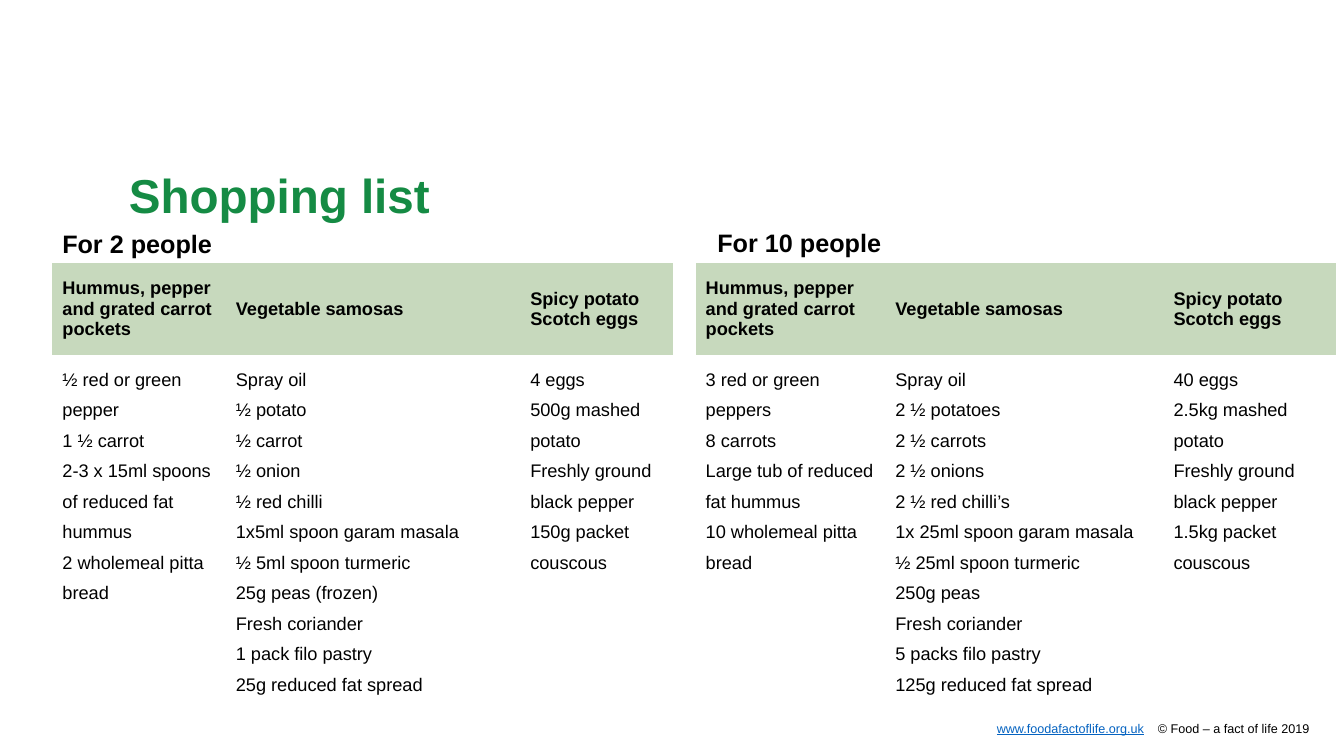
import pptx
import pptx.dml.color
import pptx.enum.text
import pptx.oxml
import pptx.oxml.ns
import pptx.util
from pptx.util import Cm

PLAIN_TABLE_STYLE = "{2D5ABB26-0587-4C30-8999-92F81FD0307C}"
HEADINGS = [
    "Hummus, pepper and grated carrot pockets",
    "Vegetable samosas",
    "Spicy potato Scotch eggs",
]
SHOPPING_LISTS = [
    {
        "people": "For 2 people",
        "label_at": (1.32, 5.64),
        "table_left": 1.32,
        "columns": [4.37, 7.42, 3.86],
        "body_fill": "FFFFFF",
        "ingredients": [
            ["½ red or green pepper", "1 ½ carrot",
             "2-3 x 15ml spoons of reduced fat hummus", "2 wholemeal pitta bread"],
            ["Spray oil", "½ potato", "½ carrot", "½ onion", "½ red chilli",
             "1x5ml spoon garam masala", "½ 5ml spoon turmeric",
             "25g peas (frozen)", "Fresh coriander", "1 pack filo pastry",
             "25g reduced fat spread"],
            ["4 eggs", "500g mashed potato", "Freshly ground black pepper",
             "150g packet couscous"],
        ],
    },
    {
        "people": "For 10 people",
        "label_at": (17.83, 5.61),
        "table_left": 17.53,
        "columns": [4.78, 7.01, 4.34],
        "body_fill": None,
        "ingredients": [
            ["3 red or green peppers", "8 carrots",
             "Large tub of reduced fat hummus", "10 wholemeal pitta bread"],
            ["Spray oil", "2 ½ potatoes", "2 ½ carrots", "2 ½ onions",
             "2 ½ red chilli’s", "1x 25ml spoon garam masala",
             "½ 25ml spoon turmeric", "250g peas", "Fresh coriander",
             "5 packs filo pastry", "125g reduced fat spread"],
            ["40 eggs", "2.5kg mashed potato", "Freshly ground black pepper",
             "1.5kg packet couscous"],
        ],
    },
]


def colour(value):
    return pptx.dml.color.RGBColor.from_string(value)


class ShoppingPage:
    """Holds the style and the slide, and adds each kind of element."""

    font_name = "Arial"
    ink = "000000"
    green = "158B44"
    link = "0563C1"
    header_fill = "C7D9BD"
    row_heights = [2.31, 9.55]

    def __init__(self, deck):
        self.page = deck.slides.add_slide(deck.slide_layouts[5])

    def style(self, font, size, bold=False, shade=ink):
        font.name = self.font_name
        font.size = pptx.util.Pt(size)
        font.bold = bold
        font.color.rgb = colour(shade)

    def clear_margins(self, frame):
        frame.margin_left = frame.margin_right = 0
        frame.margin_top = frame.margin_bottom = 0

    def title(self, text):
        holder = self.page.shapes.title
        holder.left, holder.top = Cm(3.25), Cm(4.34)
        holder.width, holder.height = Cm(27), Cm(2.01)
        frame = holder.text_frame
        frame.text = text
        frame.vertical_anchor = pptx.enum.text.MSO_ANCHOR.TOP
        self.clear_margins(frame)
        para = frame.paragraphs[0]
        para.alignment = pptx.enum.text.PP_ALIGN.LEFT
        para.line_spacing = 0.9
        self.style(para.font, 34, True, self.green)

    def text_box(self, left, top, width, height):
        box = self.page.shapes.add_textbox(Cm(left), Cm(top), Cm(width), Cm(height))
        box.text_frame.word_wrap = True
        return box.text_frame

    def label(self, text, left, top):
        para = self.text_box(left, top, 10.39, 1.02).paragraphs[0]
        para.text = text
        self.style(para.font, 18, True)

    def fill_cell(self, cell, lines, fill, heading=False):
        if fill:
            cell.fill.solid()
            cell.fill.fore_color.rgb = colour(fill)
        else:
            cell.fill.background()
        if heading:
            cell.vertical_anchor = pptx.enum.text.MSO_ANCHOR.MIDDLE
        cell.text_frame.text = "\n".join(lines)
        for para in cell.text_frame.paragraphs:
            if not heading:
                para.line_spacing = 1.5
            self.style(para.font, 13, heading)

    def table(self, left, columns, ingredients, body_fill):
        table = self.page.shapes.add_table(
            2, len(columns), Cm(left), Cm(6.63),
            Cm(sum(columns)), Cm(sum(self.row_heights))).table
        table.horz_banding = False
        style_id = table._tbl.tblPr.find(pptx.oxml.ns.qn("a:tableStyleId"))
        style_id.text = PLAIN_TABLE_STYLE
        for row, height in zip(table.rows, self.row_heights):
            row.height = Cm(height)
        for index, width in enumerate(columns):
            table.columns[index].width = Cm(width)
            self.fill_cell(table.cell(0, index), [HEADINGS[index]], self.header_fill, True)
            self.fill_cell(table.cell(1, index), ingredients[index], body_fill)

    def footer(self, address, rights):
        frame = self.text_box(25.12, 18.16, 7.95, 0.38)
        self.clear_margins(frame)
        para = frame.paragraphs[0]
        para._p.get_or_add_pPr().append(pptx.oxml.parse_xml(
            f'<a:tabLst {pptx.oxml.ns.nsdecls("a")}>'
            f'<a:tab pos="{Cm(4.06)}" algn="l"/></a:tabLst>'))
        for text, shade in ((address, self.link), ("\t" + rights, self.ink)):
            span = para.add_run()
            span.text = text
            span.font.underline = shade == self.link
            self.style(span.font, 9, shade=shade)


def main():
    deck = pptx.Presentation()
    deck.slide_width, deck.slide_height = Cm(33.87), Cm(19.05)
    page = ShoppingPage(deck)
    page.footer("www.foodafactoflife.org.uk", "© Food – a fact of life 2019")
    page.title("Shopping list")
    for shopping in SHOPPING_LISTS:
        page.label(shopping["people"], *shopping["label_at"])
        page.table(shopping["table_left"], shopping["columns"],
                   shopping["ingredients"], shopping["body_fill"])
    deck.save("out.pptx")


if __name__ == "__main__":
    main()
